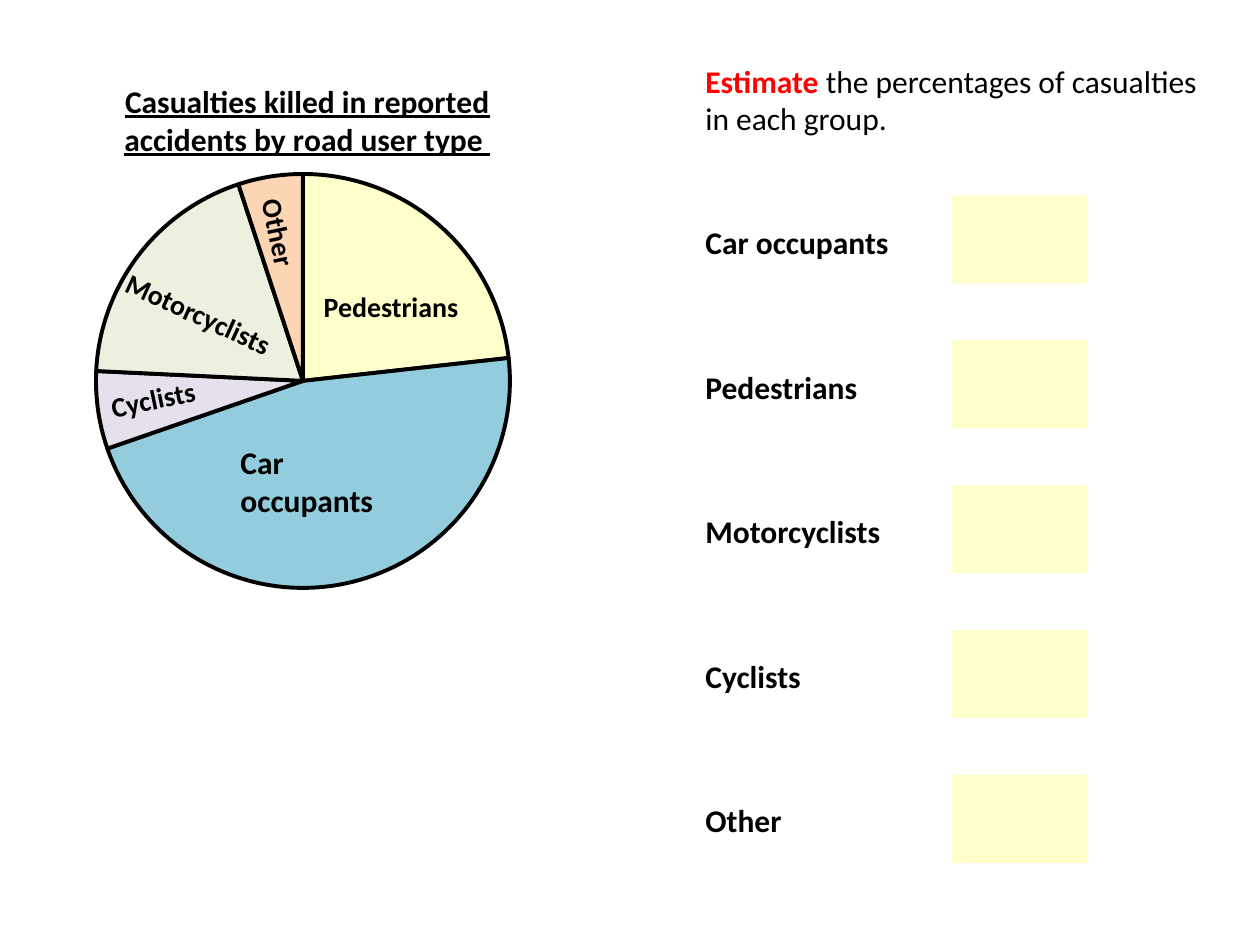
from lxml import etree
from pptx import Presentation
from pptx import util as u
from pptx.chart.data import CategoryChartData
from pptx.dml.color import RGBColor
from pptx.enum import chart as c, shapes, text
from pptx.oxml.ns import qn

PALE_YELLOW = "FFFFCC"


def color(value):
    return RGBColor.from_string(value)


def set_layout(parent, index, **settings):
    """Give a chart title or plot area a fixed place, as fractions of the chart."""
    for old in parent.findall(qn("c:layout")):
        parent.remove(old)
    layout = etree.Element(qn("c:layout"))
    manual = etree.SubElement(layout, qn("c:manualLayout"))
    for name, value in settings.items():
        etree.SubElement(manual, qn("c:" + name)).set("val", str(value))
    parent.insert(index, layout)


presentation = Presentation()
presentation.slide_width = u.Inches(10)
presentation.slide_height = u.Inches(7.5)
slide = presentation.slides.add_slide(presentation.slide_layouts[6])

# Pie chart
data = CategoryChartData()
data.categories = ["1", "2", "3", "4", "5"]
data.add_series("Series 1", (23, 46, 6, 19, 5))
chart = slide.shapes.add_chart(
    c.XL_CHART_TYPE.PIE, u.Inches(0.12), u.Inches(0.36), u.Inches(4.57), u.Inches(4.44), data
).chart
chart.has_legend = False
chart.font.name = "Calibri"
chart.font.size = u.Pt(18)
chart.font.color.rgb = color("000000")

chart.has_title = True
run = chart.chart_title.text_frame.paragraphs[0].add_run()
run.text = "Casualties killed in reported accidents by road user type "
run.font.name = "Calibri"
run.font.size = u.Pt(18)
run.font.bold = True
run.font.underline = True
run.font.color.rgb = color("000000")

plot = chart.plots[0]
plot.vary_by_categories = True
for index, fill in enumerate([PALE_YELLOW, "93CDDD", "E6E0EC", "EBF1DE", "FCD5B5"]):
    point = plot.series[0].points[index]
    point.format.fill.solid()
    point.format.fill.fore_color.rgb = color(fill)
    point.format.line.color.rgb = color("000000")
    point.format.line.width = u.Pt(2.25)

chart_element = chart.element.find(qn("c:chart"))
set_layout(chart_element.find(qn("c:title")), 1, xMode="edge", yMode="edge", x=0.18, y=0.05)
set_layout(chart_element.find(qn("c:plotArea")), 0, layoutTarget="inner",
           xMode="edge", yMode="edge", x=0.14, y=0.23, w=0.72, h=0.74)

# Text: place, rotation, then paragraphs of (space before, runs)
groups = ["Car occupants", "Pedestrians", "Motorcyclists", "Cyclists", "Other"]
instructions = [
    (0, [("Estimate ", 18, True, "FF0000"), ("the percentages of casualties", 18, False, "000000")]),
    (0, [("in each group.", 18, False, "000000")]),
]
for index, group in enumerate(groups):
    instructions.append((61 if index else 49, [(group, 18, True, "000000")]))

text_boxes = [((5.5, 0.44, 4.15, 6.34), 0, instructions)]
for label, size, place, rotation in [
    ("Car occupants", 18, (1.81, 3.47, 1.65, 0.4), 0),
    ("Pedestrians", 16, (2.47, 2.25, 1.28, 0.37), 0),
    ("Motorcyclists", 16, (0.86, 2.31, 1.45, 0.37), 24.4),
    ("Cyclists", 16, (0.78, 2.98, 0.88, 0.37), 348.3),
    ("Other", 16, (1.84, 1.67, 0.75, 0.37), 78.1),
]:
    text_boxes.append((place, rotation, [(0, [(label, size, True, "000000")])]))

for place, rotation, paragraphs in text_boxes:
    box = slide.shapes.add_textbox(*map(u.Inches, place))
    box.rotation = rotation
    frame = box.text_frame
    frame.word_wrap = False
    frame.auto_size = text.MSO_AUTO_SIZE.SHAPE_TO_FIT_TEXT
    for index, (space_before, runs) in enumerate(paragraphs):
        paragraph = frame.add_paragraph() if index else frame.paragraphs[0]
        paragraph.space_before = u.Pt(space_before)
        for words, size, bold, font_color in runs:
            run = paragraph.add_run()
            run.text = words
            run.font.name = "Calibri"
            run.font.size = u.Pt(size)
            run.font.bold = bold
            run.font.color.rgb = color(font_color)

# Answer boxes
for index in range(len(groups)):
    answer = slide.shapes.add_shape(
        shapes.MSO_SHAPE.RECTANGLE,
        u.Inches(7.55), u.Inches(1.55 + 1.15 * index), u.Inches(1.08), u.Inches(0.7),
    )
    answer.shadow.inherit = False
    answer.fill.solid()
    answer.fill.fore_color.rgb = color(PALE_YELLOW)
    answer.line.fill.background()

presentation.save("out.pptx")
